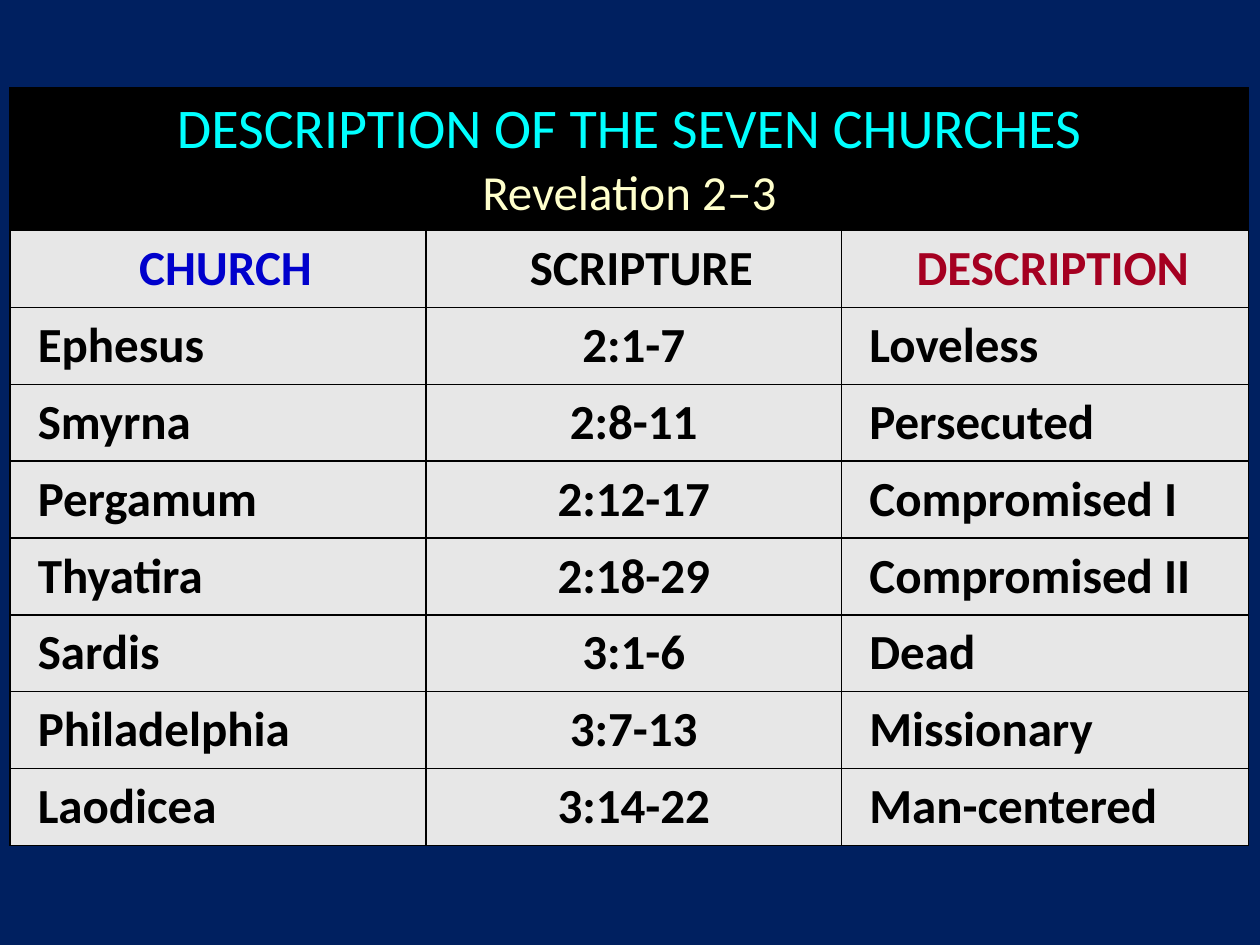
from dataclasses import dataclass

from lxml import etree
from pptx import Presentation
from pptx import util as u
from pptx.dml.color import RGBColor
from pptx.enum import text
from pptx.oxml.ns import qn


@dataclass(frozen=True)
class Theme:
    font: str = "Calibri"
    title_size: int = 32
    body_size: int = 28
    background: str = "002060"
    banner: str = "000000"
    title: str = "00FFFF"
    subtitle: str = "FFFFCC"
    cell: str = "E7E7E7"
    ink: str = "000000"
    church: str = "0000CC"
    description: str = "A50021"


theme = Theme()
CENTER, LEFT = text.PP_ALIGN.CENTER, text.PP_ALIGN.LEFT

headings = ["CHURCH", "SCRIPTURE", "DESCRIPTION"]
heading_colors = [theme.church, theme.ink, theme.description]
churches = [
    ("Ephesus", "2:1-7", "Loveless"),
    ("Smyrna", "2:8-11", "Persecuted"),
    ("Pergamum", "2:12-17", "Compromised I"),
    ("Thyatira", "2:18-29", "Compromised II"),
    ("Sardis", "3:1-6", "Dead"),
    ("Philadelphia", "3:7-13", "Missionary"),
    ("Laodicea", "3:14-22", "Man-centered"),
]
column_widths = [3.3, 3.3, 3.23]
banner_height, row_height = 1.13, 0.61
row_heights = [banner_height] + [row_height] * (len(churches) + 1)


def style_cell(cell, fill):
    """Fill and centre the cell vertically, with a thin border on each side."""
    cell.vertical_anchor = text.MSO_ANCHOR.MIDDLE
    properties = cell._tc.get_or_add_tcPr()
    for side in ("a:lnL", "a:lnR", "a:lnT", "a:lnB"):
        line = etree.SubElement(properties, qn(side), w=str(u.Pt(1)))
        solid = etree.SubElement(line, qn("a:solidFill"))
        etree.SubElement(solid, qn("a:srgbClr"), val=theme.ink)
    cell.fill.solid()
    cell.fill.fore_color.rgb = RGBColor.from_string(fill)


def style_font(font, size, color, bold):
    font.name = theme.font
    font.size = u.Pt(size)
    font.bold = bold
    font.color.rgb = RGBColor.from_string(color)


presentation = Presentation()
presentation.slide_width, presentation.slide_height = u.Inches(10), u.Inches(7.5)
slide = presentation.slides.add_slide(presentation.slide_layouts[6])
slide.background.fill.solid()
slide.background.fill.fore_color.rgb = RGBColor.from_string(theme.background)

table = slide.shapes.add_table(
    len(row_heights), len(column_widths), u.Inches(0.08), u.Inches(0.7),
    u.Inches(sum(column_widths)), u.Inches(sum(row_heights))).table
table.horz_banding = False
for column, width in zip(table.columns, column_widths):
    column.width = u.Inches(width)
for row, height in zip(table.rows, row_heights):
    row.height = u.Inches(height)

# Banner across all columns
banner = table.cell(0, 0)
banner.merge(table.cell(0, len(column_widths) - 1))
for cell in table.rows[0].cells:
    style_cell(cell, theme.banner)
paragraph = banner.text_frame.paragraphs[0]
paragraph.text = "DESCRIPTION OF THE SEVEN CHURCHES\vRevelation 2‒3"
paragraph.alignment = CENTER
title_run, subtitle_run = paragraph.runs
style_font(title_run.font, theme.title_size, theme.title, False)
style_font(subtitle_run.font, theme.body_size, theme.subtitle, False)

# Headings and the seven churches
for row_index, entries in enumerate([headings, *churches], start=1):
    is_heading = row_index == 1
    for column_index, entry in enumerate(entries):
        is_scripture = column_index == 1
        cell = table.cell(row_index, column_index)
        style_cell(cell, theme.cell)
        paragraph = cell.text_frame.paragraphs[0]
        paragraph.text = entry
        paragraph.alignment = CENTER if is_heading or is_scripture else LEFT
        if is_heading or not is_scripture:
            paragraph._p.get_or_add_pPr().set("marL", str(u.Inches(0.12)))
        color = heading_colors[column_index] if is_heading else theme.ink
        style_font(paragraph.runs[0].font, theme.body_size, color, True)

presentation.save("out.pptx")
